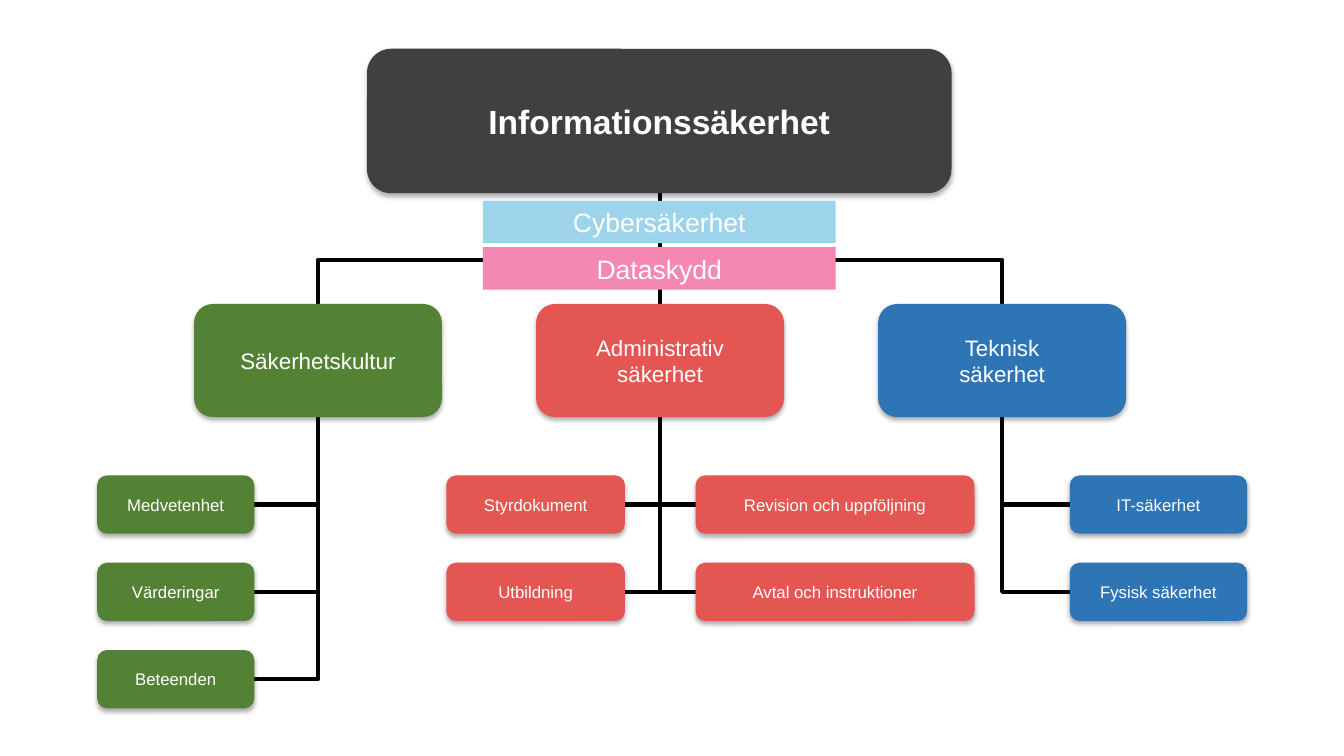
from lxml import etree
from pptx import Presentation
from pptx.dml.color import RGBColor
from pptx.enum.shapes import MSO_CONNECTOR, MSO_SHAPE
from pptx.enum.text import MSO_ANCHOR, PP_ALIGN
from pptx.oxml.ns import qn
from pptx.util import Cm, Pt

ROUNDED = MSO_SHAPE.ROUNDED_RECTANGLE
RECTANGLE = MSO_SHAPE.RECTANGLE
STRAIGHT = MSO_CONNECTOR.STRAIGHT
ELBOW = MSO_CONNECTOR.ELBOW
MIDDLE = MSO_ANCHOR.MIDDLE
CENTER = PP_ALIGN.CENTER
BLANK_LAYOUT = 6

ROOT_LEFT, ROOT_TOP, ROOT_WIDTH, ROOT_HEIGHT = 9.25, 1.23, 14.73, 3.64
PILLAR_LEFT, PILLAR_TOP, PILLAR_WIDTH, PILLAR_HEIGHT = 4.89, 7.66, 6.25, 2.85
PILLAR_STEP = 8.62
CROSSBAR_TOP = 6.55
TOPIC_TOP, TOPIC_HEIGHT, TOPIC_STEP = 11.98, 1.47, 2.2
BAND_LEFT, BAND_TOP, BAND_WIDTH, BAND_HEIGHT = 12.17, 5.06, 8.89, 1.07
BAND_STEP = 1.17

PILLARS = [
    ("Säkerhetskultur", "548235",
     [(2.45, 3.96, ["Medvetenhet", "Värderingar", "Beteenden"])]),
    ("Administrativ\nsäkerhet", "E45651",
     [(11.25, 4.5, ["Styrdokument", "Utbildning"]),
      (17.53, 7.03, ["Revision och uppföljning", "Avtal och instruktioner"])]),
    ("Teknisk\nsäkerhet", "2E75B6",
     [(26.96, 4.47, ["IT-säkerhet", "Fysisk säkerhet"])]),
]
BANDS = [("Cybersäkerhet", "9ED4EB"), ("Dataskydd", "F587B3")]


def color(value):
    return RGBColor.from_string(value)


class Chart:
    """Draws the boxes, bands and lines of an organisation chart on one slide."""

    font_name = "Arial"
    text_color = "FFFFFF"
    line_color = "000000"
    line_width = 3

    def __init__(self, slide):
        self.slide = slide

    def block(self, kind, text, fill, left, top, width, height, size, bold=False):
        shape = self.slide.shapes.add_shape(kind, Cm(left), Cm(top), Cm(width), Cm(height))
        shape.shadow.inherit = False
        shape.fill.solid()
        shape.fill.fore_color.rgb = color(fill)
        shape.line.fill.background()
        frame = shape.text_frame
        frame.text = text
        frame.word_wrap = True
        frame.vertical_anchor = MIDDLE
        font_format = {"name": self.font_name, "size": Pt(size), "bold": bold}
        for paragraph in frame.paragraphs:
            paragraph.alignment = CENTER
            for name, value in font_format.items():
                setattr(paragraph.font, name, value)
            paragraph.font.color.rgb = color(self.text_color)
        return shape

    def box(self, *values, **options):
        shape = self.block(ROUNDED, *values, **options)
        effects = shape._element.spPr.find(qn("a:effectLst"))
        shadow = etree.SubElement(effects, qn("a:outerShdw"), blurRad=str(Pt(3.5)),
                                  dist=str(Pt(2.2)), dir="5400000", rotWithShape="0")
        shade = etree.SubElement(shadow, qn("a:srgbClr"), val="000000")
        etree.SubElement(shade, qn("a:alpha"), val="32000")

    def band(self, *values):
        self.block(RECTANGLE, *values)

    def line(self, x1, y1, x2, y2, kind=STRAIGHT):
        connector = self.slide.shapes.add_connector(kind, Cm(x1), Cm(y1), Cm(x2), Cm(y2))
        connector.line.color.rgb = color(self.line_color)
        connector.line.width = Pt(self.line_width)
        etree.SubElement(connector._element.spPr, qn("a:effectLst"))
        return connector

    def elbow(self, x1, y1, x2, y2):
        connector = self.line(x1, y1, x2, y2, ELBOW)
        connector._element.spPr.find(qn("a:prstGeom")).set("prst", "bentConnector2")


def draw_pillar(chart, center, name, fill, columns):
    for left, width, topics in columns:
        edge = left if left > center else left + width
        for row, topic in enumerate(topics):
            top = TOPIC_TOP + row * TOPIC_STEP
            chart.elbow(edge, top + TOPIC_HEIGHT / 2, center, PILLAR_TOP + PILLAR_HEIGHT)
            chart.box(topic, fill, left, top, width, TOPIC_HEIGHT, 12)
    chart.box(name, fill, center - PILLAR_WIDTH / 2, PILLAR_TOP,
              PILLAR_WIDTH, PILLAR_HEIGHT, 16)


def main():
    presentation = Presentation()
    presentation.slide_width = Cm(33.87)
    presentation.slide_height = Cm(19.05)
    slide = presentation.slides.add_slide(presentation.slide_layouts[BLANK_LAYOUT])
    chart = Chart(slide)

    first_center = PILLAR_LEFT + PILLAR_WIDTH / 2
    centers = [first_center + index * PILLAR_STEP for index in range(len(PILLARS))]
    left_center, middle_center, right_center = centers
    chart.line(middle_center, ROOT_TOP + ROOT_HEIGHT, middle_center, PILLAR_TOP)
    for center in (left_center, right_center):
        chart.elbow(middle_center, CROSSBAR_TOP, center, PILLAR_TOP)
    chart.box("Informationssäkerhet", "404040", ROOT_LEFT, ROOT_TOP,
              ROOT_WIDTH, ROOT_HEIGHT, 24, bold=True)
    for center, pillar in zip(centers, PILLARS):
        draw_pillar(chart, center, *pillar)
    for index, (name, fill) in enumerate(BANDS):
        chart.band(name, fill, BAND_LEFT, BAND_TOP + index * BAND_STEP,
                   BAND_WIDTH, BAND_HEIGHT, 19)

    presentation.save("out.pptx")


if __name__ == "__main__":
    main()
